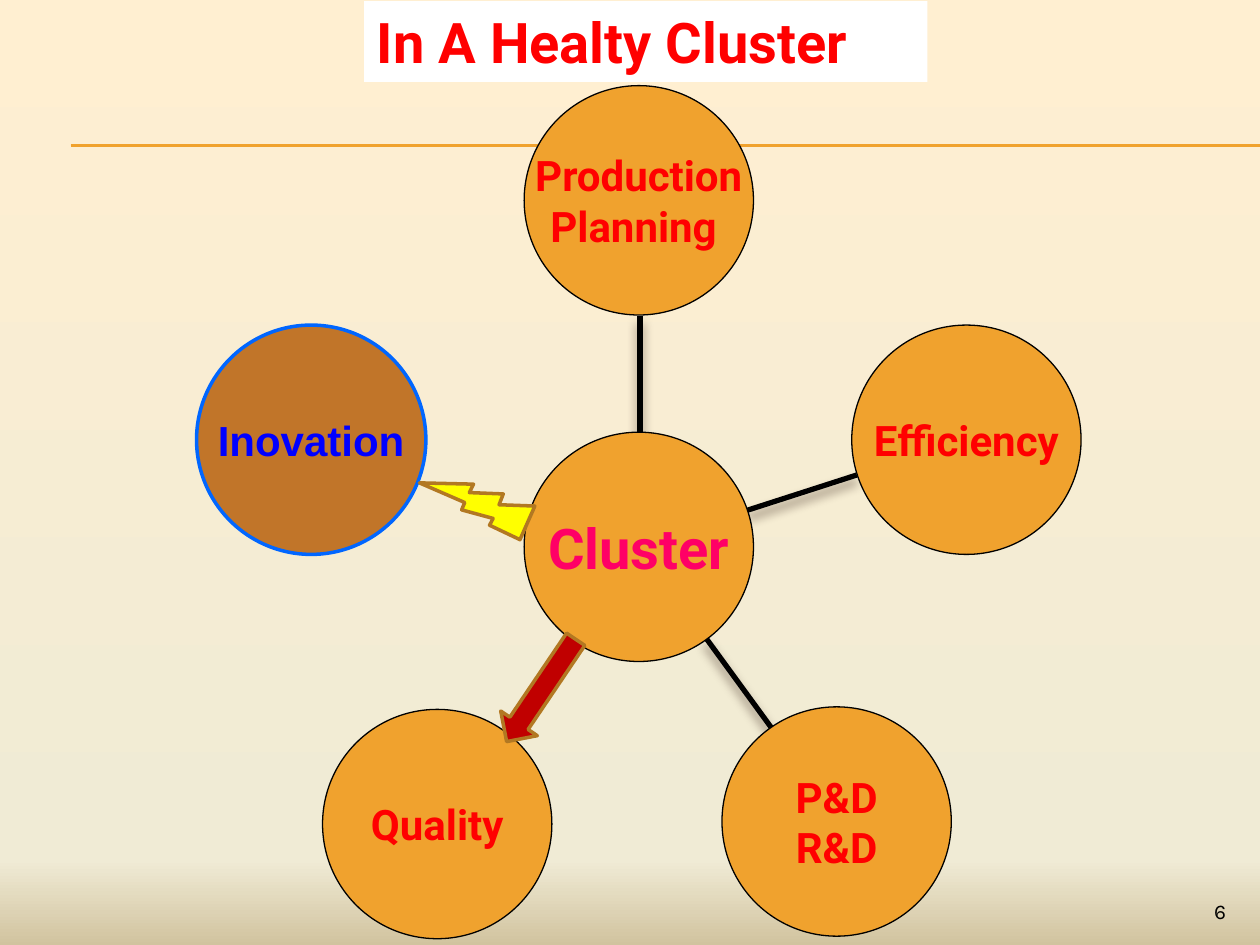
from copy import deepcopy

from lxml import etree
from pptx import Presentation
from pptx.dml.color import RGBColor
from pptx.enum.shapes import MSO_CONNECTOR, MSO_SHAPE
from pptx.enum.text import MSO_ANCHOR, MSO_AUTO_SIZE, PP_ALIGN
from pptx.oxml.ns import qn
from pptx.util import Inches, Pt

STRAIGHT = MSO_CONNECTOR.STRAIGHT
OVAL, BOLT, ARROW = MSO_SHAPE.OVAL, MSO_SHAPE.LIGHTNING_BOLT, MSO_SHAPE.DOWN_ARROW
LEFT, CENTER, RIGHT = PP_ALIGN.LEFT, PP_ALIGN.CENTER, PP_ALIGN.RIGHT
MIDDLE = MSO_ANCHOR.MIDDLE
NO_AUTOFIT = MSO_AUTO_SIZE.NONE

ORANGE, RED, BLACK = "F0A22E", "FF0000", "000000"
DIAMETER = 1.82
STOPS = [(0, "FFEFD1"), (0.91, "F0EBD5"), (1, "D1C39F")]
RULES = [1.15, 1.16]
SPOKES = [(5.08, 3.43, 5.08, 2.51), (5.93, 4.05, 6.8, 3.77), (5.6, 5.06, 6.14, 5.8)]
CIRCLES = [
    ("Production\nPlanning ", 4.16, 0.68, {}),
    ("Efficiency", 6.76, 2.58, {}),
    ("P&D\nR&D", 5.73, 5.61, {}),
    ("Quality", 2.56, 5.63, {}),
    ("Inovation", 1.56, 2.58, {"fill": "C17529", "line": "0066FF", "width": 2,
                               "font": "Arial", "color": "0000FF"}),
    ("Cluster", 4.16, 3.43, {"size": 32, "color": "FF0066"}),
]


def rgb(value):
    """Turn a hex string into a colour."""
    return RGBColor.from_string(value)


def set_background(slide):
    """Give the slide its vertical gradient."""
    fill = slide.background.fill
    fill.gradient()
    fill.gradient_angle = 270
    stops = slide.element.find(".//" + qn("a:gsLst"))
    stops.append(deepcopy(stops[-1]))
    for stop, (position, color) in zip(fill.gradient_stops, STOPS):
        stop.position = position
        stop.color.rgb = rgb(color)


def format_text(tf, size, font, color, align, bold=True):
    """Format every paragraph and run of a text frame."""
    for p in tf.paragraphs:
        p.alignment = align
        for r in p.runs:
            r.font.size = Pt(size)
            r.font.name = font
            r.font.bold = bold
            r.font.color.rgb = rgb(color)


def place(sp, left, top, width, height):
    """Set the position and size of a shape."""
    sp.left, sp.top = Inches(left), Inches(top)
    sp.width, sp.height = Inches(width), Inches(height)


def add_title(slide, text):
    """Fill the title placeholder on its white band."""
    sp = slide.shapes.title
    place(sp, 2.89, 0.01, 4.47, 0.64)
    sp.fill.solid()
    sp.fill.fore_color.rgb = rgb("FFFFFF")
    tf = sp.text_frame
    tf.text = text
    tf.word_wrap = True
    tf.auto_size = NO_AUTOFIT
    tf.vertical_anchor = MIDDLE
    format_text(tf, 32, "Roboto", RED, LEFT)


def add_line(slide, ends, color, width, shadow=False):
    """Add a straight line, with a soft shadow if asked."""
    line = slide.shapes.add_connector(STRAIGHT, *map(Inches, ends))
    line.line.color.rgb = rgb(color)
    line.line.width = Pt(width)
    effects = etree.SubElement(line.element.spPr, qn("a:effectLst"))
    if shadow:
        outer = etree.SubElement(effects, qn("a:outerShdw"), blurRad=str(Pt(6)),
                                 dist=str(Pt(4)), dir="5400000", rotWithShape="0")
        tint = etree.SubElement(outer, qn("a:srgbClr"), val="4E3B30")
        etree.SubElement(tint, qn("a:alpha"), val="60000")


def add_figure(slide, kind, box, fill, line, width, rotation=0):
    """Add a filled and outlined preset shape."""
    sp = slide.shapes.add_shape(kind, *map(Inches, box))
    sp.shadow.inherit = False
    sp.fill.solid()
    sp.fill.fore_color.rgb = rgb(fill)
    sp.line.color.rgb = rgb(line)
    sp.line.width = Pt(width)
    sp.rotation = rotation
    return sp


def add_circle(slide, text, left, top, fill=ORANGE, line=BLACK, width=0.75,
               size=24, font="Roboto", color=RED):
    """Add a circle with a centred label."""
    sp = add_figure(slide, OVAL, (left, top, DIAMETER, DIAMETER), fill, line, width)
    tf = sp.text_frame
    tf.text = text
    tf.word_wrap = False
    tf.vertical_anchor = MIDDLE
    tf.margin_left = tf.margin_right = tf.margin_top = tf.margin_bottom = 0
    format_text(tf, size, font, color, CENTER)


def add_number(slide, text):
    """Add the page number at the lower right."""
    tf = slide.shapes.add_textbox(*map(Inches, (9, 7.08, 0.83, 0.27))).text_frame
    tf.text = text
    tf.word_wrap = True
    format_text(tf, 12, "Karla", BLACK, RIGHT, bold=False)


def main():
    """Build the slide and save it."""
    prs = Presentation()
    prs.slide_width, prs.slide_height = Inches(10), Inches(7.5)
    slide = prs.slides.add_slide(prs.slide_layouts[5])
    set_background(slide)
    add_title(slide, "In A Healty Cluster")
    for y in RULES:
        add_line(slide, (0.56, y, 10, y), ORANGE, 0.75)
    for ends in SPOKES:
        add_line(slide, ends, BLACK, 3, shadow=True)
    for text, left, top, style in CIRCLES:
        add_circle(slide, text, left, top, **style)
    add_figure(slide, BOLT, (3.51, 3.57, 0.64, 0.83), "FFFF00", "B27822", 2, 144.6)
    add_number(slide, "6")
    add_figure(slide, ARROW, (4.12, 4.99, 0.35, 0.98), "C00000", "B27822", 2, 34)
    prs.save("out.pptx")


if __name__ == "__main__":
    main()
